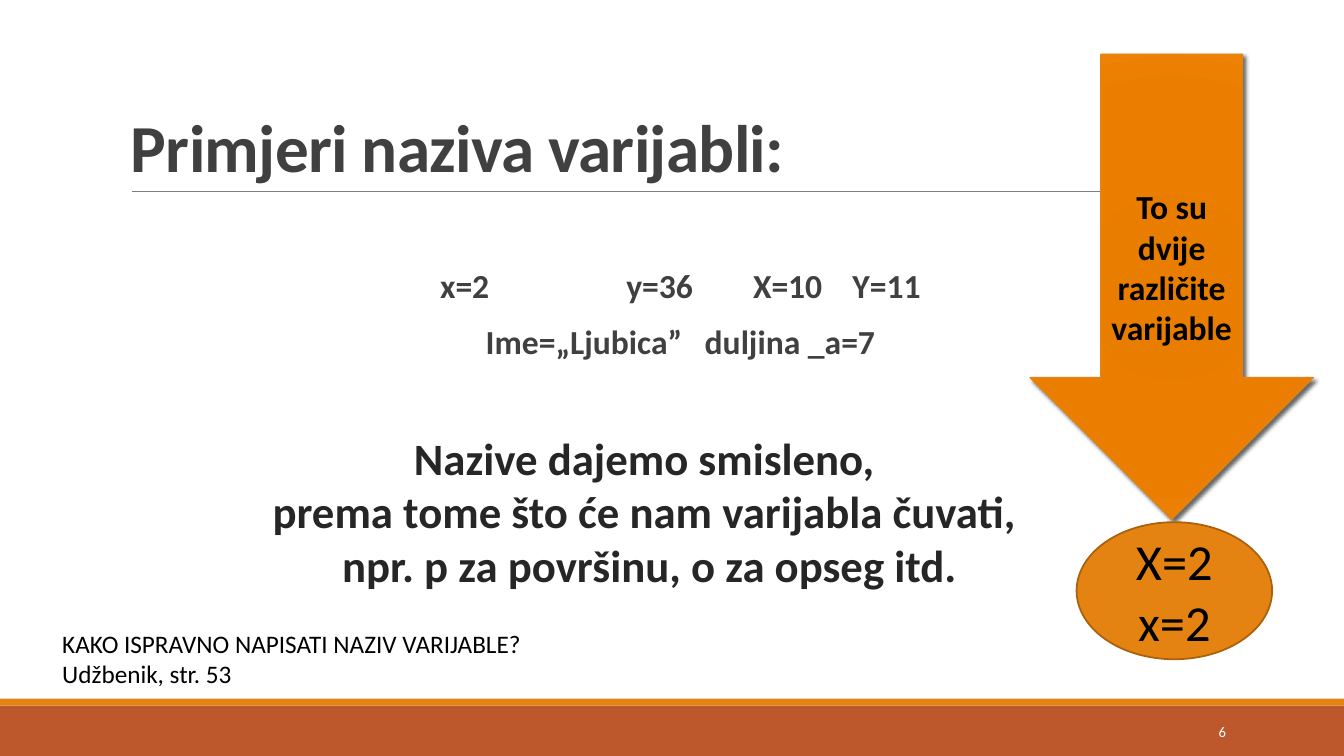
from pptx import Presentation
from pptx.dml.color import RGBColor
from pptx.enum.shapes import MSO_CONNECTOR, MSO_SHAPE
from pptx.enum.text import MSO_ANCHOR, PP_ALIGN
from pptx.oxml import parse_xml
from pptx.oxml.ns import nsdecls, qn
from pptx.util import Pt
from lxml import etree

RECT, OVAL, ARROW = MSO_SHAPE.RECTANGLE, MSO_SHAPE.OVAL, MSO_SHAPE.DOWN_ARROW
LEFT, MID, RIGHT = PP_ALIGN.LEFT, PP_ALIGN.CENTER, PP_ALIGN.RIGHT
TOP, CENTER, BOTTOM = MSO_ANCHOR.TOP, MSO_ANCHOR.MIDDLE, MSO_ANCHOR.BOTTOM
STRAIGHT = MSO_CONNECTOR.STRAIGHT

# Content
TITLE = ["Primjeri naziva varijabli:"]
SAMPLES = [
    (["x=2", "y=36", "X=10", "Y=11"], [228, 361, 451.5, 522.5]),
    (["Ime=„Ljubica”", "duljina _a=7"], [260.5, 417]),
]
ADVICE = ["Nazive dajemo smisleno, ",
          "prema tome što će nam varijabla čuvati, ",
          "npr. p za površinu, o za opseg itd."]
CLAIM = ["To su dvije različite varijable"]
PAIR = ["X=2", "x=2"]
TASK = ["KAKO ISPRAVNO NAPISATI NAZIV VARIJABLE?", "Udžbenik, str. 53"]
NUMBER = ["6"]

THEME = {
    "font": "Calibri",
    "rust": "BD582C", "orange": "E48312", "brown": "A9610D", "rule": "808080",
    "gray": "404040", "dark": "262626", "black": "000000", "white": "FFFFFF",
    "glow": [(0, "E57B00"), (34, "E87D00"), (70, "EB7E00"), (100, "EF8407")],
    "title": 48, "big": 36, "advice": 32, "body": 24, "small": 18, "tiny": 10.5,
}
WIDE, HIGH = 960, 540
BAND, STRIPE = 36, 5


def tint(name):
    return RGBColor.from_string(THEME[name])


def write(shape, lines, size, color, align=LEFT, bold=False, anchor=TOP,
          wrap=True, ratio=None, gap=0, **inset):
    """Fill a shape with one paragraph per line and return the paragraphs."""
    frame = shape.text_frame
    layout = {"word_wrap": wrap, "vertical_anchor": anchor}
    layout.update({f"margin_{side}": Pt(n) for side, n in inset.items()})
    for key, value in layout.items():
        setattr(frame, key, value)
    paras = []
    for i, line in enumerate(lines):
        para = frame.add_paragraph() if i else frame.paragraphs[0]
        para.alignment = align
        if ratio:
            para.line_spacing = ratio
        if i and gap:
            para.space_before = Pt(gap)
        run = para.add_run()
        run.text = line
        style = {"name": THEME["font"], "size": Pt(THEME[size]), "bold": bold}
        for key, value in style.items():
            setattr(run.font, key, value)
        run.font.color.rgb = tint(color)
        paras.append(para)
    return paras


def add_text(slide, box, *args, **style):
    return write(slide.shapes.add_textbox(*map(Pt, box)), *args, **style)


def add_form(slide, kind, box, fill, edge=None, width=1):
    form = slide.shapes.add_shape(kind, *map(Pt, box))
    form.shadow.inherit = False
    form.fill.solid()
    form.fill.fore_color.rgb = tint(fill)
    if edge:
        form.line.color.rgb = tint(edge)
        form.line.width = Pt(width)
    else:
        form.line.fill.background()
    return form


def set_tabs(para, stops):
    tabs = etree.SubElement(para._p.get_or_add_pPr(), qn("a:tabLst"))
    for stop in stops:
        etree.SubElement(tabs, qn("a:tab"), pos=str(int(Pt(stop))), algn="l")


def add_glow(form):
    """Give a form a round gradient and a soft shadow."""
    props = form._element.spPr
    stops = "".join(
        f'<a:gs pos="{at * 1000}"><a:srgbClr val="{color}"/></a:gs>'
        for at, color in THEME["glow"])
    props.replace(props.find(qn("a:solidFill")), parse_xml(
        f'<a:gradFill {nsdecls("a")} rotWithShape="1"><a:gsLst>{stops}</a:gsLst>'
        '<a:path path="circle"><a:fillToRect l="100000" t="100000" '
        'r="100000" b="100000"/></a:path></a:gradFill>'))
    props.find(qn("a:effectLst")).append(parse_xml(
        f'<a:outerShdw {nsdecls("a")} blurRad="{Pt(3)}" dist="{Pt(2)}" '
        'dir="2700000" rotWithShape="0"><a:srgbClr val="000000">'
        '<a:alpha val="60000"/></a:srgbClr></a:outerShdw>'))


def add_rule(slide, left, right, y):
    rule = slide.shapes.add_connector(STRAIGHT, Pt(left), Pt(y), Pt(right), Pt(y))
    rule.line.color.rgb = tint("rule")
    rule.line.width = Pt(0.5)
    etree.SubElement(rule._element.spPr, qn("a:effectLst"))


def main():
    deck = Presentation()
    deck.slide_width, deck.slide_height = Pt(WIDE), Pt(HIGH)
    slide = deck.slides.add_slide(deck.slide_layouts[6])

    add_form(slide, RECT, (0, HIGH - BAND, WIDE, BAND), "rust")
    add_form(slide, RECT, (0, HIGH - BAND - STRIPE, WIDE, STRIPE), "orange")
    add_rule(slide, 94.3, 879, 136.8)

    title = add_text(slide, (86.4, 22.3, 792, 114.5), TITLE, "title", "gray",
                     bold=True, anchor=BOTTOM, ratio=0.85)
    title[0].runs[0].font._element.set("spc", "-50")

    rows = ["\t" + "\t".join(names) for names, _ in SAMPLES]
    paras = add_text(slide, (86.4, 145.4, 792, 316.8), rows, "body", "gray",
                     bold=True, ratio=0.9, gap=14, left=0, right=0, top=47)
    for para, (_, stops) in zip(paras, SAMPLES):
        set_tabs(para, stops)

    add_text(slide, (185, 303.8, 558, 189.4), ADVICE, "advice", "dark",
             align=MID, bold=True, wrap=False)

    arrow = add_form(slide, ARROW, (735.8, 38.9, 202.3, 332), "orange", "orange")
    add_glow(arrow)
    write(arrow, CLAIM, "body", "black", align=MID, bold=True,
          anchor=CENTER, top=25.6)
    oval = add_form(slide, OVAL, (769, 373, 139.7, 97.9), "orange", "brown", 1.25)
    write(oval, PAIR, "big", "black", align=MID, anchor=CENTER)

    add_text(slide, (37.4, 445, 386.6, 51), TASK, "small", "black")
    add_text(slide, (779.8, 508.3, 103, 28.8), NUMBER, "tiny", "white",
             align=RIGHT, anchor=CENTER)
    deck.save("out.pptx")


if __name__ == "__main__":
    main()
